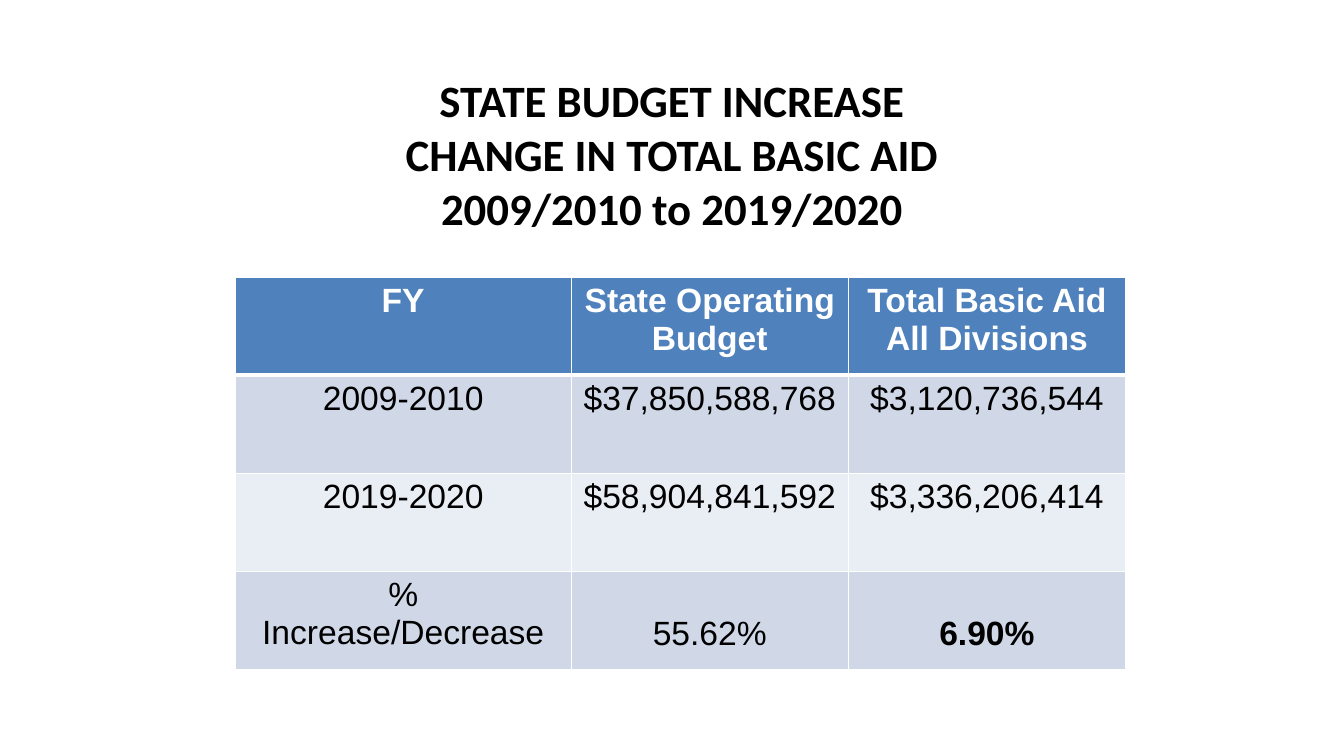
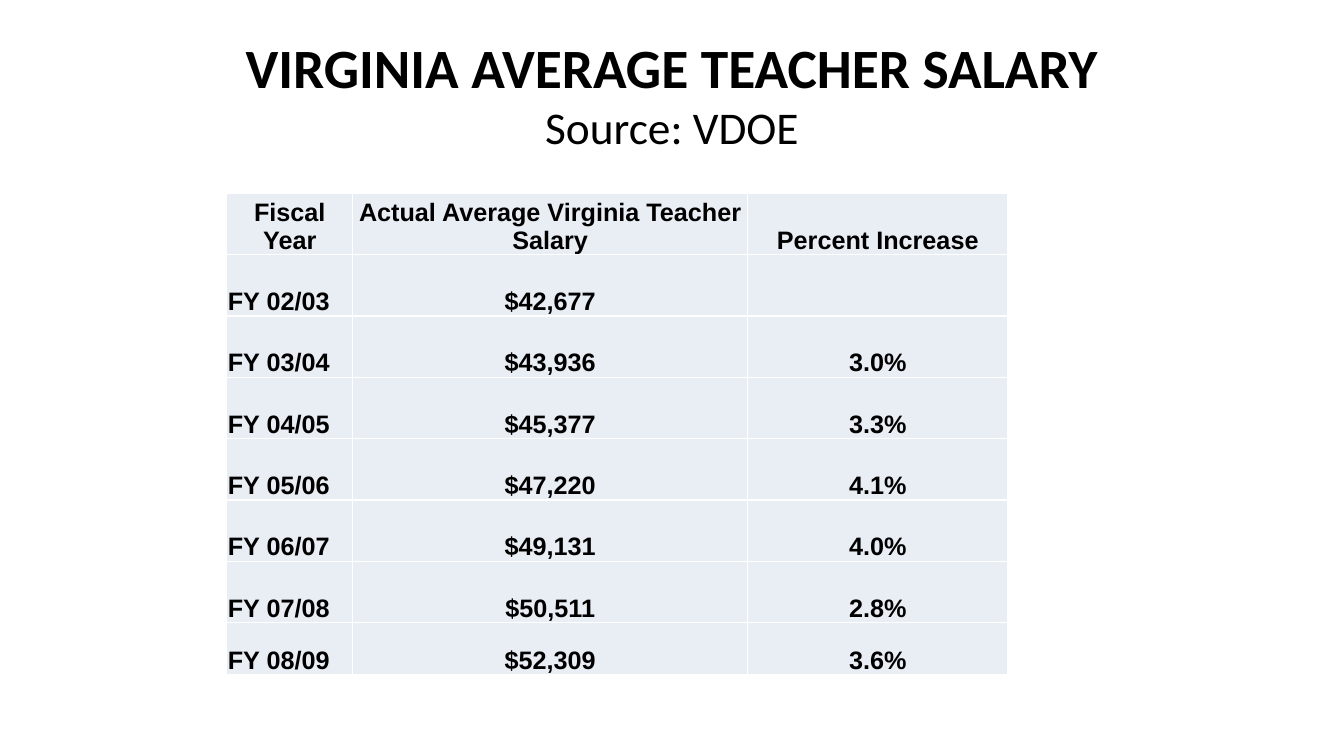
from dataclasses import dataclass

from lxml.etree import SubElement
from pptx import Presentation
from pptx.dml.color import RGBColor
from pptx.enum.text import MSO_ANCHOR as Anchor, PP_ALIGN as Align
from pptx.oxml.ns import qn
from pptx.slide import Slide
from pptx.table import _Cell as Cell
from pptx.util import Inches, Length, Pt

W, H = 13.33, 7.5
COLS, ROWS = 160, 90
COLORS = {
    "text": "000000",
    "white": "FFFFFF",
    "header": "4F81BD",
    "band": "D0D8E8",
    "pale": "E9EDF4",
}
TITLE_FONT, TABLE_FONT = "Calibri", "Arial"
CELL_MARGINS = (0.1, 0.05, 0.1, 0.05)
TIGHT_MARGINS = (0.01, 0.01, 0.01, 0)


@dataclass(frozen=True)
class Line:
    """One line of a title."""
    text: str
    size: float
    bold: bool = True


@dataclass(frozen=True)
class Title:
    """A centred title placed on the grid."""
    box: tuple[float, float, float, float]
    lines: tuple[Line, ...]


@dataclass(frozen=True)
class Grid:
    """A table with its place, sizes and look."""
    left: float
    top: float
    widths: tuple[float, ...]
    heights: tuple[float, ...]
    data: tuple[tuple[str, ...], ...]
    fills: tuple[str, ...]
    size: float
    anchor: Anchor
    margins: tuple[float, float, float, float]
    first_align: Align = Align.CENTER
    all_bold: bool = False
    bold_cells: tuple[tuple[int, int], ...] = ()
    lowered: tuple[tuple[int, int], ...] = ()


def x(n: float) -> Length:
    """Return the length of n grid columns."""
    return Inches(W * n / COLS)


def y(n: float) -> Length:
    """Return the length of n grid rows."""
    return Inches(H * n / ROWS)


def rgb(name: str) -> RGBColor:
    """Look up a named colour."""
    return RGBColor.from_string(COLORS[name])


def add_title(s: Slide, title: Title) -> None:
    """Draw a title, one paragraph for each line."""
    left, top, width, height = title.box
    tf = s.shapes.add_textbox(x(left), y(top), x(width), y(height)).text_frame
    tf.word_wrap = True
    tf.vertical_anchor = Anchor.MIDDLE
    for i, line in enumerate(title.lines):
        p = tf.add_paragraph() if i else tf.paragraphs[0]
        p.text = line.text
        p.alignment = Align.CENTER
        p.font.name, p.font.size, p.font.bold = TITLE_FONT, Pt(line.size), line.bold
        p.font.color.rgb = rgb("text")


def add_borders(cell: Cell, top: float, bottom: float) -> None:
    """Give a cell white borders, with its own top and bottom widths."""
    pr = cell._tc.get_or_add_tcPr()
    for side, width in zip("LRTB", (1, 1, top, bottom)):
        ln = SubElement(pr, qn(f"a:ln{side}"), w=str(Pt(width)))
        fill = SubElement(ln, qn("a:solidFill"))
        SubElement(fill, qn("a:srgbClr"), val=COLORS["white"])


def fill_cell(cell: Cell, grid: Grid, row: int, col: int) -> None:
    """Write and format one cell."""
    blue = grid.fills[row] == "header"
    below_blue = row > 0 and grid.fills[row - 1] == "header"
    add_borders(cell, 3 if below_blue else 1, 3 if blue else 1)
    cell.fill.solid()
    cell.fill.fore_color.rgb = rgb(grid.fills[row])
    left, top, right, bottom = grid.margins
    if (row, col) in grid.lowered:
        top += grid.size * 1.15 / 72
    cell.margin_left, cell.margin_top = Inches(left), Inches(top)
    cell.margin_right, cell.margin_bottom = Inches(right), Inches(bottom)
    cell.vertical_anchor = grid.anchor
    cell.text = grid.data[row][col]
    for p in cell.text_frame.paragraphs:
        p.alignment = grid.first_align if row and not col else Align.CENTER
        p.font.name, p.font.size = TABLE_FONT, Pt(grid.size)
        p.font.bold = grid.all_bold or blue or (row, col) in grid.bold_cells
        p.font.color.rgb = rgb("white" if blue else "text")


def add_grid(s: Slide, grid: Grid) -> None:
    """Draw a table."""
    table = s.shapes.add_table(
        len(grid.heights), len(grid.widths), x(grid.left), y(grid.top),
        x(sum(grid.widths)), y(sum(grid.heights)),
    ).table
    table.first_row = table.horz_banding = False
    for column, width in zip(table.columns, grid.widths):
        column.width = x(width)
    for i, (row, height) in enumerate(zip(table.rows, grid.heights)):
        row.height = y(height)
        for j, cell in enumerate(row.cells):
            fill_cell(cell, grid, i, j)


BUDGET_TITLE = Title((26, 3.6, 108, 29.4), (
    Line("STATE BUDGET INCREASE", 32),
    Line("CHANGE IN TOTAL BASIC AID", 32),
    Line("2009/2010 to 2019/2020", 32),
))
BUDGET = Grid(
    left=28, top=33, widths=(40, 33, 33), heights=(11.67,) * 4,
    data=(
        ("FY", "State Operating Budget", "Total Basic Aid\nAll Divisions"),
        ("2009-2010", "$37,850,588,768", "$3,120,736,544"),
        ("2019-2020", "$58,904,841,592", "$3,336,206,414"),
        ("% Increase/Decrease", "55.62%", "6.90%"),
    ),
    fills=("header", "band", "pale", "band"),
    size=24, anchor=Anchor.TOP, margins=CELL_MARGINS,
    bold_cells=((3, 2),), lowered=((3, 1), (3, 2)),
)
SALARY_TITLE = Title((8, 3.6, 144, 15), (
    Line("VIRGINIA AVERAGE TEACHER SALARY", 39.6),
    Line("Source: VDOE", 32.4, bold=False),
))
SALARY = Grid(
    left=27, top=23, widths=(15, 47, 31), heights=(7.3,) * 7 + (6.25,),
    data=(
        ("Fiscal Year", "Actual Average Virginia Teacher Salary", "Percent Increase"),
        ("FY 02/03", "$42,677", ""),
        ("FY 03/04", "$43,936", "3.0%"),
        ("FY 04/05", "$45,377", "3.3%"),
        ("FY 05/06", "$47,220", "4.1%"),
        ("FY 06/07", "$49,131", "4.0%"),
        ("FY 07/08", "$50,511", "2.8%"),
        ("FY 08/09", "$52,309", "3.6%"),
    ),
    fills=("pale",) * 8,
    size=18, anchor=Anchor.BOTTOM, margins=TIGHT_MARGINS,
    first_align=Align.LEFT, all_bold=True,
)


def main() -> None:
    """Build and save the presentation."""
    prs = Presentation()
    prs.slide_width, prs.slide_height = Inches(W), Inches(H)
    for title, grid in ((BUDGET_TITLE, BUDGET), (SALARY_TITLE, SALARY)):
        s = prs.slides.add_slide(prs.slide_layouts[6])
        add_title(s, title)
        add_grid(s, grid)
    prs.save("out.pptx")


if __name__ == "__main__":
    main()
